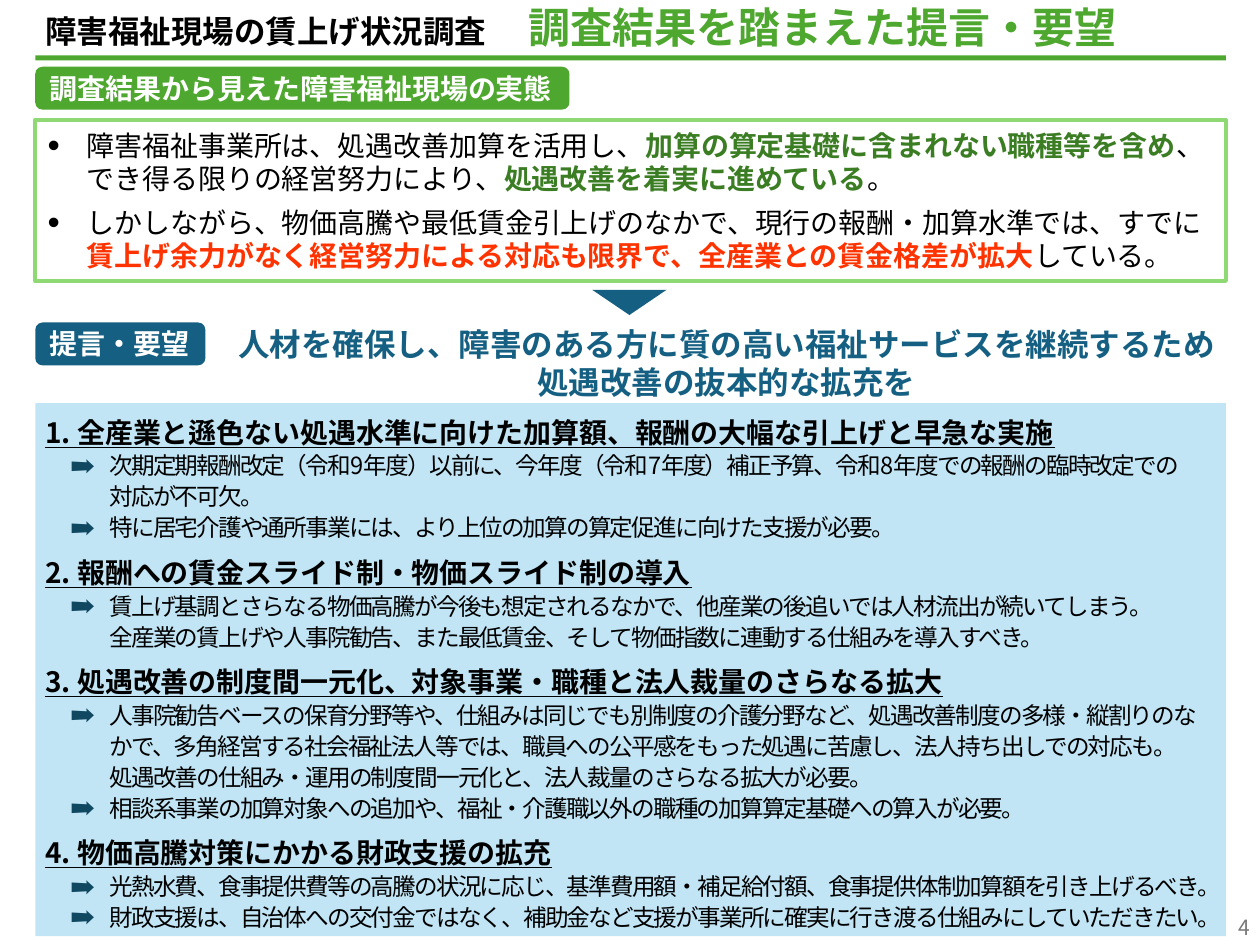
from pptx import Presentation
from pptx.dml.color import RGBColor
from pptx.enum.lang import MSO_LANGUAGE_ID
from pptx.enum.shapes import MSO_SHAPE
from pptx.enum.text import MSO_ANCHOR, PP_ALIGN
from pptx.oxml.ns import qn
from pptx.util import Inches, Pt
from lxml.etree import SubElement

FONT = "Noto Sans CJK JP"
GREEN, DARK_GREEN, BLUE, RED = "4EA72E", "3B7D23", "156082", "FF3300"
BLACK, WHITE = "000000", "FFFFFF"
LEFT, WIDTH = 0.28, 9.45
BULLET_DOT = {"char": "•", "indent": 0.31, "margin": 0.31, "size": 125}
BULLET_ARROW = {"char": "➡", "indent": 0.31, "margin": 0.51, "color": "104862"}

FINDINGS = [
    [("障害福祉事業所は、処遇改善加算を活用し、", BLACK),
     ("加算の算定基礎に含まれない職種等を含め", DARK_GREEN),
     ("、でき得る限りの経営努力により、", BLACK),
     ("処遇改善を着実に進めている", DARK_GREEN), ("。", BLACK)],
    [("しかしながら、物価高騰や最低賃金引上げのなかで、現行の報酬・加算水準では、すでに", BLACK),
     ("賃上げ余力がなく経営努力による対応も限界で、全産業との賃金格差が拡大", RED),
     ("している。", BLACK)],
]

REQUESTS = [
    ("全産業と遜色ない処遇水準に向けた加算額、報酬の大幅な引上げと早急な実施", [
        "次期定期報酬改定（令和9年度）以前に、今年度（令和7年度）補正予算、"
        "令和8年度での報酬の臨時改定での\n対応が不可欠。",
        "特に居宅介護や通所事業には、より上位の加算の算定促進に向けた支援が必要。"]),
    ("報酬への賃金スライド制・物価スライド制の導入", [
        "賃上げ基調とさらなる物価高騰が今後も想定されるなかで、"
        "他産業の後追いでは人材流出が続いてしまう。\n"
        "全産業の賃上げや人事院勧告、また最低賃金、そして物価指数に連動する仕組みを導入すべき。"]),
    ("処遇改善の制度間一元化、対象事業・職種と法人裁量のさらなる拡大", [
        "人事院勧告ベースの保育分野等や、仕組みは同じでも別制度の介護分野など、"
        "処遇改善制度の多様・縦割りのなかで、多角経営する社会福祉法人等では、"
        "職員への公平感をもった処遇に苦慮し、法人持ち出しでの対応も。\n"
        "処遇改善の仕組み・運用の制度間一元化と、法人裁量のさらなる拡大が必要。",
        "相談系事業の加算対象への追加や、福祉・介護職以外の職種の加算算定基礎への算入が必要。"]),
    ("物価高騰対策にかかる財政支援の拡充", [
        "光熱水費、食事提供費等の高騰の状況に応じ、基準費用額・補足給付額、"
        "食事提供体制加算額を引き上げるべき。",
        "財政支援は、自治体への交付金ではなく、補助金など支援が事業所に"
        "確実に行き渡る仕組みにしていただきたい。"]),
]


def rgb(value):
    return RGBColor.from_string(value)


def add_box(s, kind, at, fill=None, line=None):
    sp = s.shapes.add_shape(kind, *map(Inches, at))
    sp.shadow.inherit = False
    if fill:
        sp.fill.solid()
        sp.fill.fore_color.rgb = rgb(fill)
    else:
        sp.fill.background()
    if line:
        sp.line.color.rgb = rgb(line)
        sp.line.width = Pt(2.25)
    else:
        sp.line.fill.background()
    return sp


def set_frame(sp, insets, anchor=MSO_ANCHOR.TOP, wrap=True):
    tf = sp.text_frame
    sides = ("left", "top", "right", "bottom")
    values = {f"margin_{side}": Inches(v) for side, v in zip(sides, insets)}
    values.update(word_wrap=wrap, vertical_anchor=anchor)
    for name, value in values.items():
        setattr(tf, name, value)
    return tf


def next_paragraph(tf, **formats):
    p = tf.paragraphs[0]
    if p.runs:
        p = tf.add_paragraph()
    formats = {"alignment": PP_ALIGN.LEFT, "space_before": Pt(0),
               "space_after": Pt(0), **formats}
    for name, value in formats.items():
        setattr(p, name, value)
    return p


def add_text(p, text, size, color=BLACK, bold=False, underline=False, spacing=0):
    for i, part in enumerate(text.split("\n")):
        if i:
            p.add_line_break()
        r = p.add_run()
        r.text = part
        formats = {"size": Pt(size), "bold": bold, "underline": underline,
                   "name": FONT, "language_id": MSO_LANGUAGE_ID.JAPANESE}
        for name, value in formats.items():
            setattr(r.font, name, value)
        r.font.color.rgb = rgb(color)
        rpr = r.font._element
        if spacing:
            rpr.set("spc", str(spacing * 100))
        east_asian = rpr.makeelement(qn("a:ea"), {"typeface": FONT})
        rpr.find(qn("a:latin")).addnext(east_asian)


def set_bullet(p, char, indent, margin, color=None, size=None):
    ppr = p._p.get_or_add_pPr()
    ppr.set("marL", str(Inches(margin)))
    ppr.set("indent", str(-Inches(indent)))
    if color:
        SubElement(SubElement(ppr, qn("a:buClr")), qn("a:srgbClr"), val=color)
    if size:
        SubElement(ppr, qn("a:buSzPct"), val=str(size * 1000))
    SubElement(ppr, qn("a:buFont"), typeface="Arial")
    SubElement(ppr, qn("a:buChar"), char=char)


def add_title(s):
    sp = s.shapes.title
    sp.left, sp.top, sp.width, sp.height = map(Inches, (LEFT, 0, WIDTH, 0.44))
    tf = set_frame(sp, (0.08, 0.07, 0.08, 0.04), MSO_ANCHOR.MIDDLE)
    p = next_paragraph(tf, line_spacing=Pt(26))
    add_text(p, "障害福祉現場の賃上げ状況調査", 18, bold=True)
    add_text(p, "\u3000", 24, bold=True)
    add_text(p, "調査結果を踏まえた提言・要望", 24, GREEN, True)
    add_box(s, MSO_SHAPE.RECTANGLE, (LEFT, 0.44, WIDTH, 0.04), GREEN)


def add_label(s, text, top, width, fill):
    sp = add_box(s, MSO_SHAPE.ROUNDED_RECTANGLE, (LEFT, top, width, 0.34), fill)
    tf = set_frame(sp, (0.1, 0.03, 0.1, 0.03), MSO_ANCHOR.MIDDLE, False)
    add_text(next_paragraph(tf, line_spacing=Pt(19)), text, 16, WHITE, True)


def add_findings(s):
    sp = add_box(s, MSO_SHAPE.RECTANGLE, (LEFT, 0.95, WIDTH, 1.28), line="8ED973")
    tf = set_frame(sp, (0.1, 0.07, 0.1, 0.05))
    for runs in FINDINGS:
        p = next_paragraph(tf, line_spacing=Pt(19), space_after=Pt(6))
        set_bullet(p, **BULLET_DOT)
        for text, color in runs:
            add_text(p, text, 16, color, bold=color != BLACK)


def add_message(s):
    sp = s.shapes.add_textbox(*map(Inches, (1.83, 2.55, 7.87, 0.65)))
    tf = set_frame(sp, (0.04, 0.03, 0.04, 0.01))
    p = next_paragraph(tf, alignment=PP_ALIGN.CENTER, line_spacing=Pt(21.6))
    add_text(p, "人材を確保し、障害のある方に質の高い福祉サービスを継続するため\n"
                "処遇改善の抜本的な拡充を", 18, BLUE, True)


def add_requests(s):
    sp = add_box(s, MSO_SHAPE.RECTANGLE, (LEFT, 3.2, WIDTH, 4.23), "C1E5F5")
    tf = set_frame(sp, (0.08, 0.07, 0.08, 0.01))
    for number, (heading, details) in enumerate(REQUESTS, 1):
        p = next_paragraph(tf, line_spacing=Pt(21),
                           space_before=Pt(6 if number > 1 else 0))
        add_text(p, f"{number}. {heading}", 16, bold=True, underline=True)
        for detail in details:
            p = next_paragraph(tf, line_spacing=Pt(17.7))
            set_bullet(p, **BULLET_ARROW)
            add_text(p, detail, 13.5, spacing=-1)


def add_page_number(s):
    sp = s.shapes.add_textbox(*map(Inches, (9.41, 7.22, 0.59, 0.28)))
    tf = set_frame(sp, (0.08, 0.04, 0.08, 0.04), MSO_ANCHOR.BOTTOM)
    p = next_paragraph(tf, alignment=PP_ALIGN.RIGHT, line_spacing=Pt(14.4))
    add_text(p, "4", 12, "797979")


def main():
    prs = Presentation()
    prs.slide_width, prs.slide_height = Inches(10), Inches(7.5)
    s = prs.slides.add_slide(prs.slide_layouts[5])
    add_title(s)
    # Findings, leading down to the requests
    add_label(s, "調査結果から見えた障害福祉現場の実態", 0.53, 4.24, GREEN)
    add_findings(s)
    arrow = add_box(s, MSO_SHAPE.ISOSCELES_TRIANGLE, (4.7, 2.3, 0.59, 0.2), BLUE)
    arrow.rotation = 180
    # Requests
    add_label(s, "提言・要望", 2.56, 1.35, BLUE)
    add_message(s)
    add_requests(s)
    add_page_number(s)
    prs.save("out.pptx")


if __name__ == "__main__":
    main()
